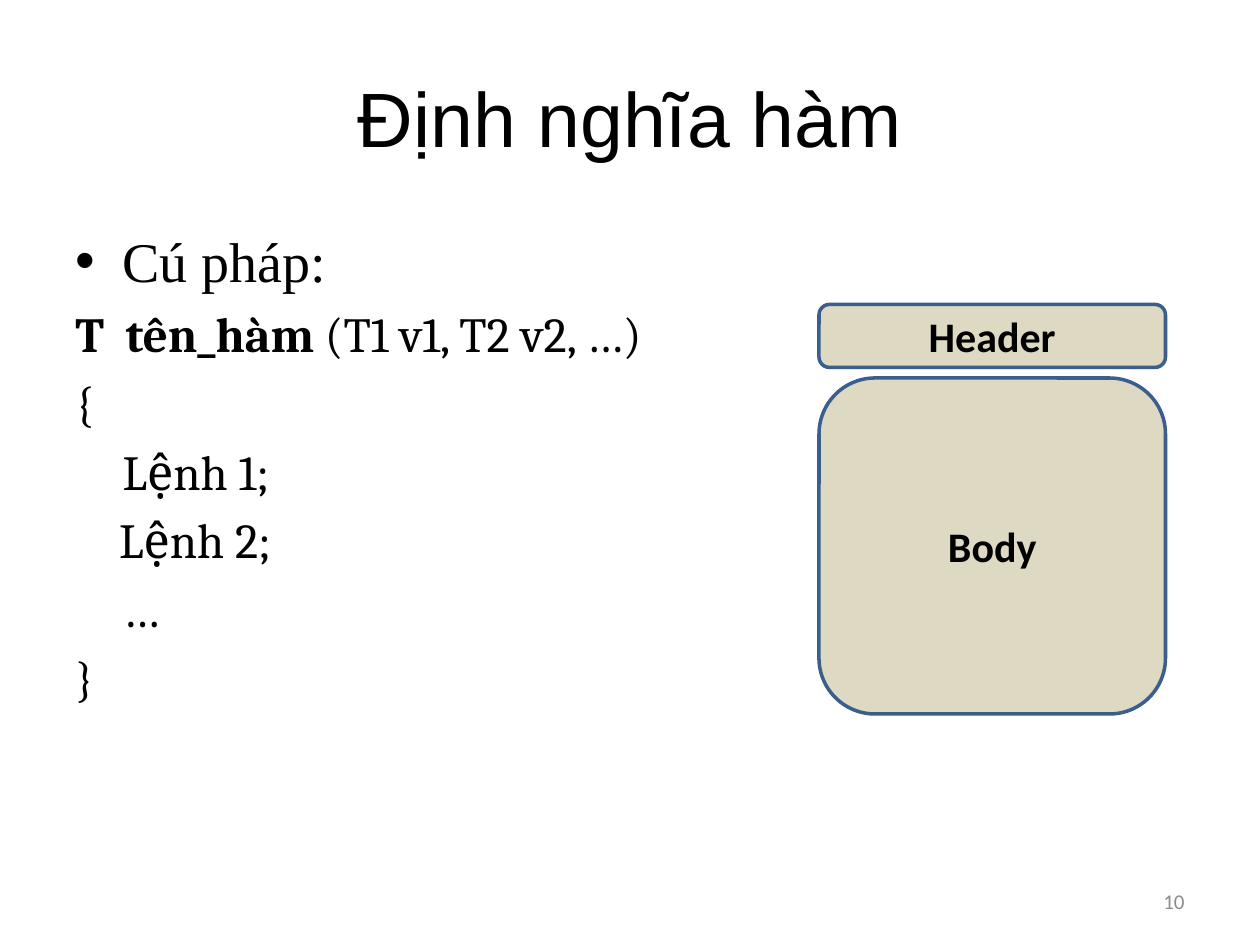
from lxml.etree import SubElement
from pptx import Presentation
from pptx.dml.color import RGBColor
from pptx.enum.shapes import MSO_SHAPE as Shape
from pptx.enum.text import MSO_ANCHOR as Anchor, PP_ALIGN as Align
from pptx.oxml.ns import qn
from pptx.util import Pt

BLACK, GREY, SAND, BLUE = "000000", "8C8C8C", "DDD9C3", "3A5F8C"
HANG = 27


def color(hex_string):
    return RGBColor.from_string(hex_string)


def add_run(paragraph, text, font, size, bold=False, ink=BLACK):
    run = paragraph.add_run()
    run.text = text
    run.font.name = font
    run.font.size = Pt(size)
    run.font.bold = bold
    run.font.color.rgb = color(ink)


def add_frame(slide, box, anchor=Anchor.MIDDLE):
    frame = slide.shapes.add_textbox(*map(Pt, box)).text_frame
    frame.word_wrap = True
    frame.vertical_anchor = anchor
    return frame


def add_label(slide, box, text, font, size, align, ink=BLACK):
    paragraph = add_frame(slide, box).paragraphs[0]
    paragraph.alignment = align
    add_run(paragraph, text, font, size, ink=ink)


def format_line(paragraph, left, first=0, bullet=None):
    props = paragraph._p.get_or_add_pPr()
    props.set("marL", str(Pt(left)))
    props.set("indent", str(Pt(first)))
    before = SubElement(props, qn("a:spcBef"))
    SubElement(before, qn("a:spcPct"), val="20000")
    if bullet:
        SubElement(props, qn("a:buFont"), typeface="Arial")
        SubElement(props, qn("a:buChar"), char=bullet)
    else:
        SubElement(props, qn("a:buNone"))


def add_syntax(slide, box):
    frame = add_frame(slide, box, Anchor.TOP)
    heading = frame.paragraphs[0]
    format_line(heading, HANG, -HANG, "•")
    add_run(heading, "Cú pháp:", "Times New Roman", 32)

    # Each code line: left indent, then (text, bold) runs
    code = [
        (0, [("T  tên_hàm", True), (" (T1 v1, T2 v2, …)", False)]),
        (0, [("{", False)]),
        (HANG, [("Lệnh 1;", False)]),
        (25, [("Lệnh 2;", False)]),
        (HANG, [("…", False)]),
        (0, [("}", False)]),
    ]
    for indent, parts in code:
        line = frame.add_paragraph()
        format_line(line, indent)
        for text, bold in parts:
            add_run(line, text, "Cambria", 28, bold)


def add_function_parts(slide, box):
    left, top, width, height = box
    header_height, gap = 36, 6
    body_offset = header_height + gap
    parts = [("Header", top, header_height),
             ("Body", top + body_offset, height - body_offset)]
    for name, part_top, part_height in parts:
        part = slide.shapes.add_shape(
            Shape.ROUNDED_RECTANGLE, Pt(left), Pt(part_top), Pt(width), Pt(part_height))
        part.shadow.inherit = False
        part.fill.solid()
        part.fill.fore_color.rgb = color(SAND)
        part.line.color.rgb = color(BLUE)
        part.line.width = Pt(2)
        part.text_frame.vertical_anchor = Anchor.MIDDLE
        paragraph = part.text_frame.paragraphs[0]
        paragraph.alignment = Align.CENTER
        add_run(paragraph, name, "Calibri", 24, bold=True)


def main():
    deck = Presentation()
    deck.slide_width, deck.slide_height = Pt(720), Pt(540)
    slide = deck.slides.add_slide(deck.slide_layouts[6])

    # Title
    add_label(slide, (36, 21.6, 648, 90), "Định nghĩa hàm", "Arial", 44, Align.CENTER)
    # Syntax on the left, the parts it names on the right
    add_syntax(slide, (36, 126, 648, 356.4))
    add_function_parts(slide, (468, 174, 198, 234))
    # Page number
    add_label(slide, (516, 500.4, 168, 28.8), "10", "Calibri", 12, Align.RIGHT, GREY)

    deck.save("out.pptx")


if __name__ == "__main__":
    main()
